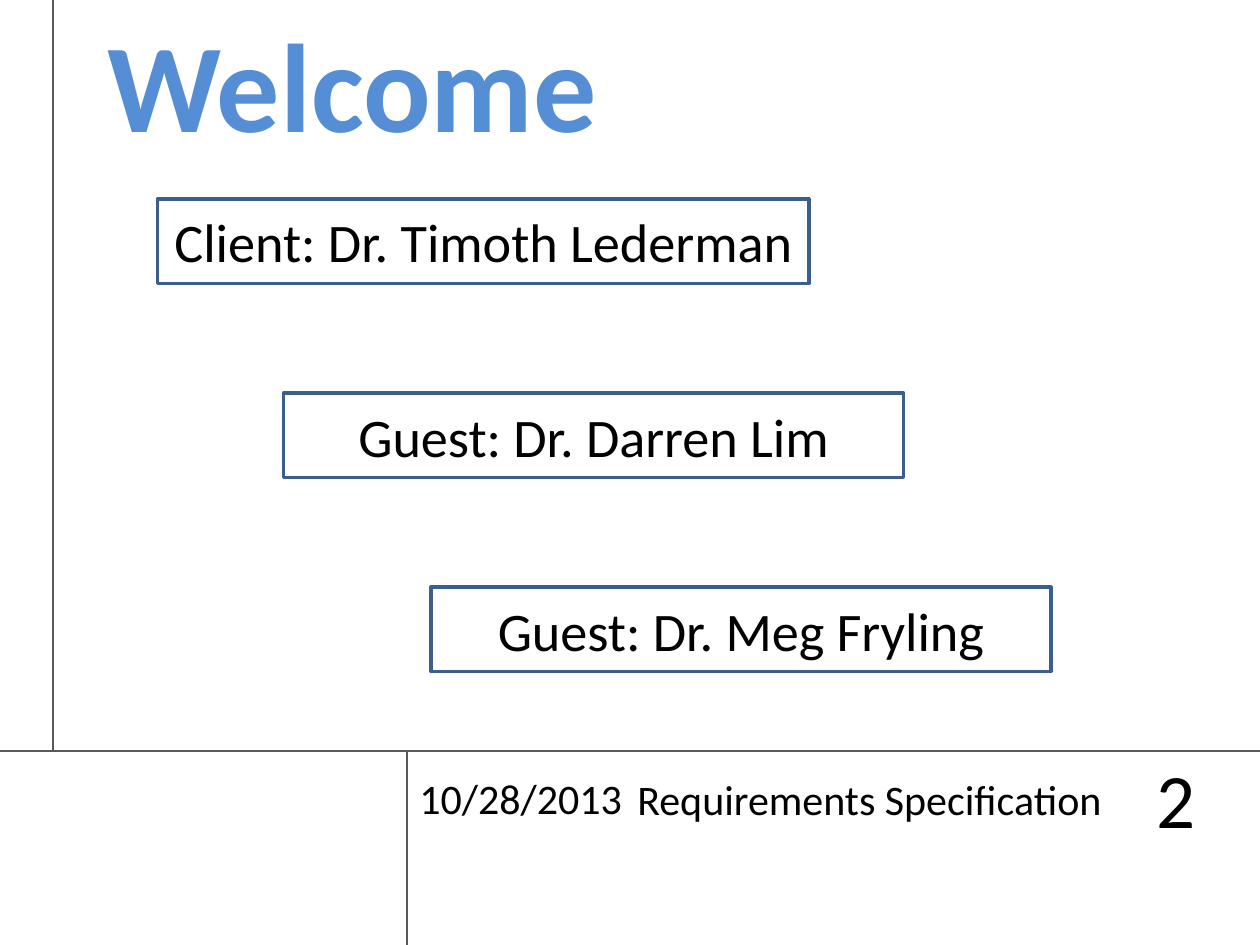
from lxml.etree import SubElement
from pptx import Presentation
from pptx.dml.color import RGBColor
from pptx.enum.shapes import MSO_CONNECTOR, MSO_SHAPE
from pptx.enum.text import MSO_ANCHOR, PP_ALIGN
from pptx.oxml.ns import qn
from pptx.util import Inches, Pt

BLACK = RGBColor(0x00, 0x00, 0x00)
WHITE = RGBColor(0xFF, 0xFF, 0xFF)
GRAY = RGBColor(0x59, 0x59, 0x59)
NAVY = RGBColor(0x3A, 0x5F, 0x8C)
BLUE = RGBColor(0x55, 0x8E, 0xD5)

WIDE, HIGH = 10, 7.5
RULE_X, RULE_Y, FOOT_X = 0.42, 5.96, 3.23


def write(shape, text, size, color=BLACK, align=PP_ALIGN.LEFT,
          anchor=MSO_ANCHOR.MIDDLE, bold=False):
    frame = shape.text_frame
    frame.word_wrap = True
    frame.vertical_anchor = anchor
    para = frame.paragraphs[0]
    para.alignment = align
    run = para.add_run()
    run.text = text
    font = run.font
    font.name, font.size, font.bold = "Calibri", Pt(size), bold
    font.color.rgb = color


def add_text(slide, box, *args, **style):
    write(slide.shapes.add_textbox(*map(Inches, box)), *args, **style)


def add_rule(slide, *ends):
    line = slide.shapes.add_connector(MSO_CONNECTOR.STRAIGHT, *map(Inches, ends))
    line.line.color.rgb = GRAY
    line.line.width = Pt(0.75)
    SubElement(line._element.spPr, qn("a:effectLst"))


def add_frame(slide):
    """Draw the thin rules that divide the page."""
    add_rule(slide, WIDE, RULE_Y, 0, RULE_Y)
    add_rule(slide, RULE_X, RULE_Y, RULE_X, 0)
    add_rule(slide, FOOT_X, HIGH, FOOT_X, RULE_Y)


def add_footer(slide, left, top):
    add_text(slide, (left, top, 1.89, 0.74), "10/28/2013", 24)
    add_text(slide, (left + 1.73, top + 0.13, 4.51, 0.5),
             "Requirements Specification", 24, anchor=MSO_ANCHOR.TOP)
    add_text(slide, (left + 5.15, top, 1.21, 0.74), "2", 44,
             align=PP_ALIGN.RIGHT)


def add_person(slide, box, text):
    card = slide.shapes.add_shape(MSO_SHAPE.RECTANGLE, *map(Inches, box))
    card.shadow.inherit = False
    card.fill.solid()
    card.fill.fore_color.rgb = WHITE
    card.line.color.rgb = NAVY
    card.line.width = Pt(2)
    write(card, text, 31, align=PP_ALIGN.CENTER)


def add_people(slide, top, step):
    people = [
        (1.25, 5.17, "Client: Dr. Timoth Lederman"),
        (2.25, 4.92, "Guest: Dr. Darren Lim"),
        (3.42, 4.92, "Guest: Dr. Meg Fryling"),
    ]
    for row, (left, width, text) in enumerate(people):
        add_person(slide, (left, top + row * step, width, 0.67), text)


def main():
    deck = Presentation()
    deck.slide_width, deck.slide_height = Inches(WIDE), Inches(HIGH)
    slide = deck.slides.add_slide(deck.slide_layouts[6])
    add_frame(slide)
    add_footer(slide, FOOT_X, RULE_Y)
    add_people(slide, 1.58, 1.54)
    add_text(slide, (RULE_X, 0, 4.75, 1.31), "Welcome", 72, color=BLUE,
             align=PP_ALIGN.CENTER, anchor=MSO_ANCHOR.TOP, bold=True)
    deck.save("out.pptx")


if __name__ == "__main__":
    main()
